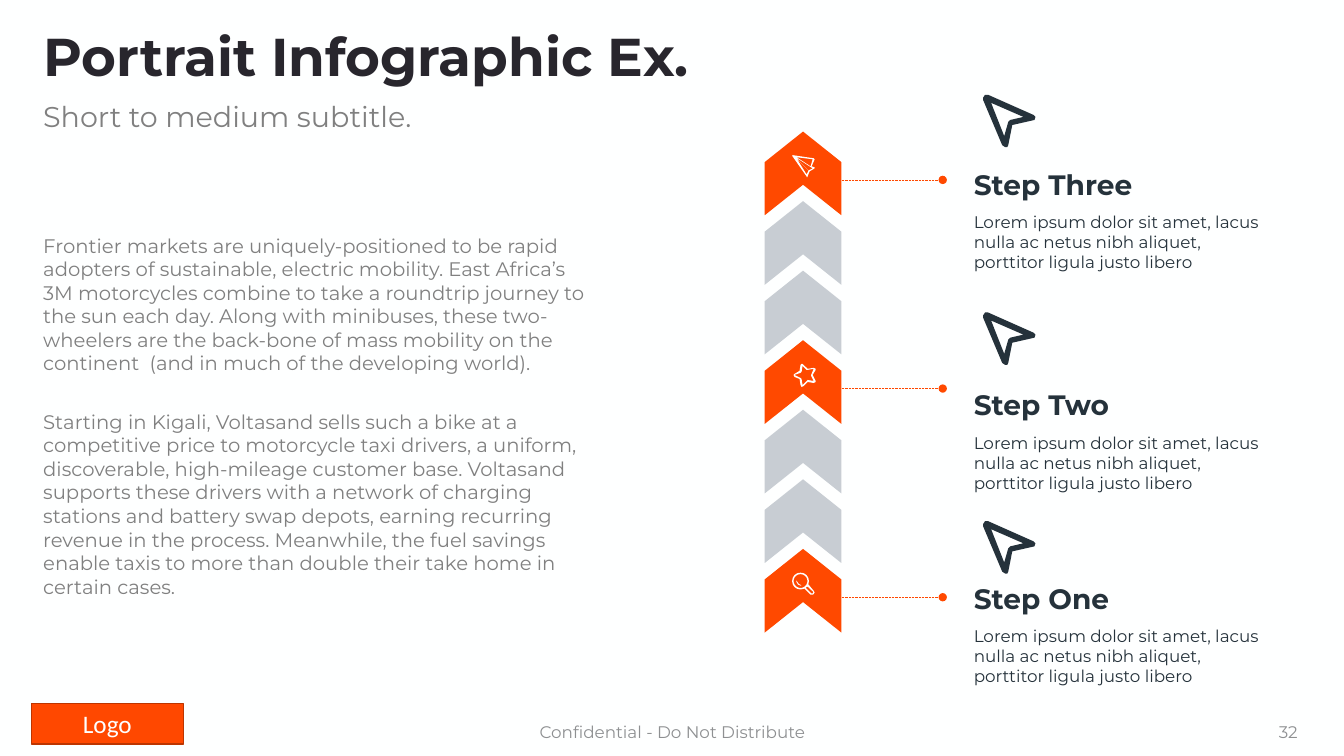
from math import cos, pi, sin

from lxml.etree import SubElement
from pptx import Presentation
from pptx.dml.color import RGBColor
from pptx.enum.dml import MSO_LINE
from pptx.enum.shapes import MSO_CONNECTOR, MSO_SHAPE
from pptx.enum.text import MSO_ANCHOR as ANCHOR, PP_ALIGN as ALIGN
from pptx.oxml.ns import qn
from pptx.util import Inches, Pt

COLORS = {
    "background": "FEFFFF", "title": "28262D", "body": "808080", "footer": "8E9092",
    "orange": "FF4900", "gray": "939DA9", "dark": "25323B",
    "logo": "FF4800", "logo_line": "BD3500",
}
PITCH = 0.69
CHEVRON_LENGTH, CHEVRON_WIDTH = 0.83, 0.76
BODY = [
    "Frontier markets are uniquely-positioned to be rapid adopters of sustainable, electric "
    "mobility. East Africa’s 3M motorcycles combine to take a roundtrip journey to the sun each "
    "day. Along with minibuses, these two-wheelers are the back-bone of mass mobility on the "
    "continent  (and in much of the developing world).",
    "Starting in Kigali, Voltasand sells such a bike at a competitive price to motorcycle taxi "
    "drivers, a uniform, discoverable, high-mileage customer base. Voltasand supports these "
    "drivers with a network of charging stations and battery swap depots, earning recurring "
    "revenue in the process. Meanwhile, the fuel savings enable taxis to more than double their "
    "take home in certain cases.",
]
LOREM = ("Lorem ipsum dolor sit amet, lacus nulla ac netus nibh aliquet, "
         "porttitor ligula justo libero")
STEPS = [("Step Three", 0.94, 1.61), ("Step Two", 3.10, 3.80), ("Step One", 5.17, 5.72)]


def circle(x, y, radius, count=32):
    """Return the points of a circle."""
    angles = [2 * pi * i / count for i in range(count)]
    return [(x + radius * cos(a), y + radius * sin(a)) for a in angles]


CURSOR = [
    [(22, 52), (19, 50), (0, 5), (0, 3), (2, 0), (5, 0), (50, 20), (52, 22), (51, 25),
     (29, 30), (25, 50), (24, 52)],
    [(8, 8), (21, 41), (25, 27), (27, 25), (40, 22)],
]
PLANE = [
    [(0, 0), (1, 0), (21, 3), (22, 4), (19, 11), (22, 12), (22, 13), (17, 16), (15, 21),
     (14.5, 22), (14, 21), (0, 1)],
    [(20, 4), (4, 2), (18, 11)],
    [(16, 15), (20, 13), (3, 2)],
    [(14, 19), (16, 15), (4, 3)],
]
STAR = [
    [(9, 0), (10, 0), (15, 5), (21, 4), (23, 5), (23, 6), (20, 11), (23, 17), (23, 18),
     (21, 19), (15, 18), (11, 22), (9, 23), (8, 21), (7, 15), (2, 13), (1, 11), (2, 10),
     (7, 7), (8, 1)],
    [(10, 2), (9, 8), (8, 9), (2, 11), (8, 14), (9, 15), (10, 21), (14, 17), (15, 16),
     (21, 17), (18.5, 12), (18.5, 11), (21, 5), (15, 6), (14, 6)],
]
SEARCH = [
    circle(8, 8.5, 8.3), circle(8, 8.5, 6.8),
    [(12, 16), (18, 22), (20.5, 22), (22, 20), (21, 18), (16, 12)],
    [(13, 15), (18.8, 20.8), (20.3, 20.7), (20.7, 19.3), (15, 14)],
    [(4, 8), (4, 9.5), (5.5, 12), (8, 13), (9, 12.8), (6.5, 11.5), (5, 9.5)],
]
ICONS = [PLANE, STAR, SEARCH]


def color(name):
    """Return a palette colour."""
    return RGBColor.from_string(COLORS[name])


def write(shape, texts, size, fill, font="Montserrat", bold=False, align=ALIGN.LEFT,
          anchor=ANCHOR.TOP, line_spacing=1.0, gap=0):
    """Fill a shape with formatted paragraphs."""
    frame = shape.text_frame
    frame.word_wrap = True
    frame.vertical_anchor = anchor
    for index, text in enumerate(texts):
        paragraph = frame.add_paragraph() if index else frame.paragraphs[0]
        paragraph.text = text
        paragraph.alignment = align
        paragraph.line_spacing = line_spacing
        if index:
            paragraph.space_before = Pt(gap)
        paragraph.font.name = font
        paragraph.font.size = Pt(size)
        paragraph.font.bold = bold
        paragraph.font.color.rgb = color(fill)


def add_text(slide, box, *texts, **style):
    """Add a text box at (left, top, width, height)."""
    write(slide.shapes.add_textbox(*map(Inches, box)), texts, **style)


def paint(shape, fill):
    """Give a shape a plain fill without line or shadow."""
    shape.shadow.inherit = False
    shape.fill.solid()
    shape.fill.fore_color.rgb = color(fill)
    shape.line.fill.background()


def add_icon(slide, left, top, contours, fill):
    """Draw contours, given in hundredths of an inch, from a corner."""
    scaled = [[(10 * x, 10 * y) for x, y in contour] for contour in contours]
    builder = slide.shapes.build_freeform(*scaled[0][0], scale=Inches(1) / 1000)
    builder.add_line_segments(scaled[0][1:], close=True)
    for contour in scaled[1:]:
        builder.move_to(*contour[0])
        builder.add_line_segments(contour[1:], close=True)
    paint(builder.convert_to_shape(Inches(left), Inches(top)), fill)


def add_pointer(slide, left, right, y):
    """Draw a dotted line ending in a dot."""
    line = slide.shapes.add_connector(
        MSO_CONNECTOR.STRAIGHT, Inches(left), Inches(y), Inches(right), Inches(y))
    line.line.color.rgb = color("orange")
    line.line.width = Pt(0.5)
    line.line.dash_style = MSO_LINE.ROUND_DOT
    properties = line._element.spPr
    SubElement(properties.find(qn("a:ln")), qn("a:tailEnd"), type="oval")
    SubElement(properties, qn("a:effectLst"))


def add_chevrons(slide, left, top):
    """Stack seven upward chevrons, every third one a marked step."""
    for index in range(7):
        y = top + index * PITCH
        chevron = slide.shapes.add_shape(
            MSO_SHAPE.CHEVRON, Inches(left), Inches(y),
            Inches(CHEVRON_LENGTH), Inches(CHEVRON_WIDTH))
        chevron.rotation = 270
        chevron.adjustments[0] = 0.398
        step, offset = divmod(index, 3)
        paint(chevron, "gray" if offset else "orange")
        if offset:
            shade = chevron._element.spPr.find(qn("a:solidFill"))[0]
            SubElement(shade, qn("a:alpha"), val="50000")
        else:
            add_icon(slide, left + 0.31, y + 0.2, ICONS[step], "background")
            add_pointer(slide, left + 0.77, left + 1.8, y + 0.445)


def add_steps(slide, left, width):
    """Place an icon, heading and description for each step."""
    for heading, icon_top, top in STEPS:
        add_icon(slide, left + 0.19, icon_top, CURSOR, "dark")
        add_text(slide, (left, top, width, 0.44), heading, size=20, fill="dark", bold=True)
        add_text(slide, (left, top + 0.44, width, 0.71), LOREM, size=12, fill="dark")


def add_copy(slide, left, top, width):
    """Place the title, subtitle and body text."""
    add_text(slide, (left, top, width, 0.67), "Portrait Infographic Ex.", size=38,
             fill="title", bold=True, anchor=ANCHOR.MIDDLE, line_spacing=0.9)
    add_text(slide, (left, top + 0.73, width, 0.4), "Short to medium subtitle.", size=20.4,
             fill="body", anchor=ANCHOR.MIDDLE, line_spacing=0.8)
    add_text(slide, (left, top + 1.84, 5.62, 4.07), *BODY, size=14, fill="body",
             anchor=ANCHOR.MIDDLE, gap=25)


def add_footer(slide, left, top):
    """Place the logo block, notice and page number."""
    logo = slide.shapes.add_shape(
        MSO_SHAPE.RECTANGLE, Inches(left), Inches(top), Inches(1.51), Inches(0.4))
    paint(logo, "logo")
    logo.line.color.rgb = color("logo_line")
    logo.line.width = Pt(1)
    write(logo, ["Logo"], size=18, fill="background", font="Calibri",
          align=ALIGN.CENTER, anchor=ANCHOR.MIDDLE)
    style = {"size": 12, "fill": "footer", "anchor": ANCHOR.MIDDLE}
    add_text(slide, (left + 4.11, top + 0.08, 4.5, 0.4), "Confidential - Do Not Distribute",
             align=ALIGN.CENTER, **style)
    add_text(slide, (left + 9.66, top + 0.08, 3, 0.4), "32", align=ALIGN.RIGHT, **style)


def main():
    """Build and save the slide."""
    presentation = Presentation()
    presentation.slide_width, presentation.slide_height = Inches(13.33), Inches(7.5)
    slide = presentation.slides.add_slide(presentation.slide_layouts[6])
    slide.background.fill.solid()
    slide.background.fill.fore_color.rgb = color("background")
    add_copy(slide, 0.33, 0.25, 12.63)
    add_chevrons(slide, 7.55, 1.34)
    add_steps(slide, 9.56, 3.16)
    add_footer(slide, 0.31, 6.98)
    presentation.save("out.pptx")


if __name__ == "__main__":
    main()
